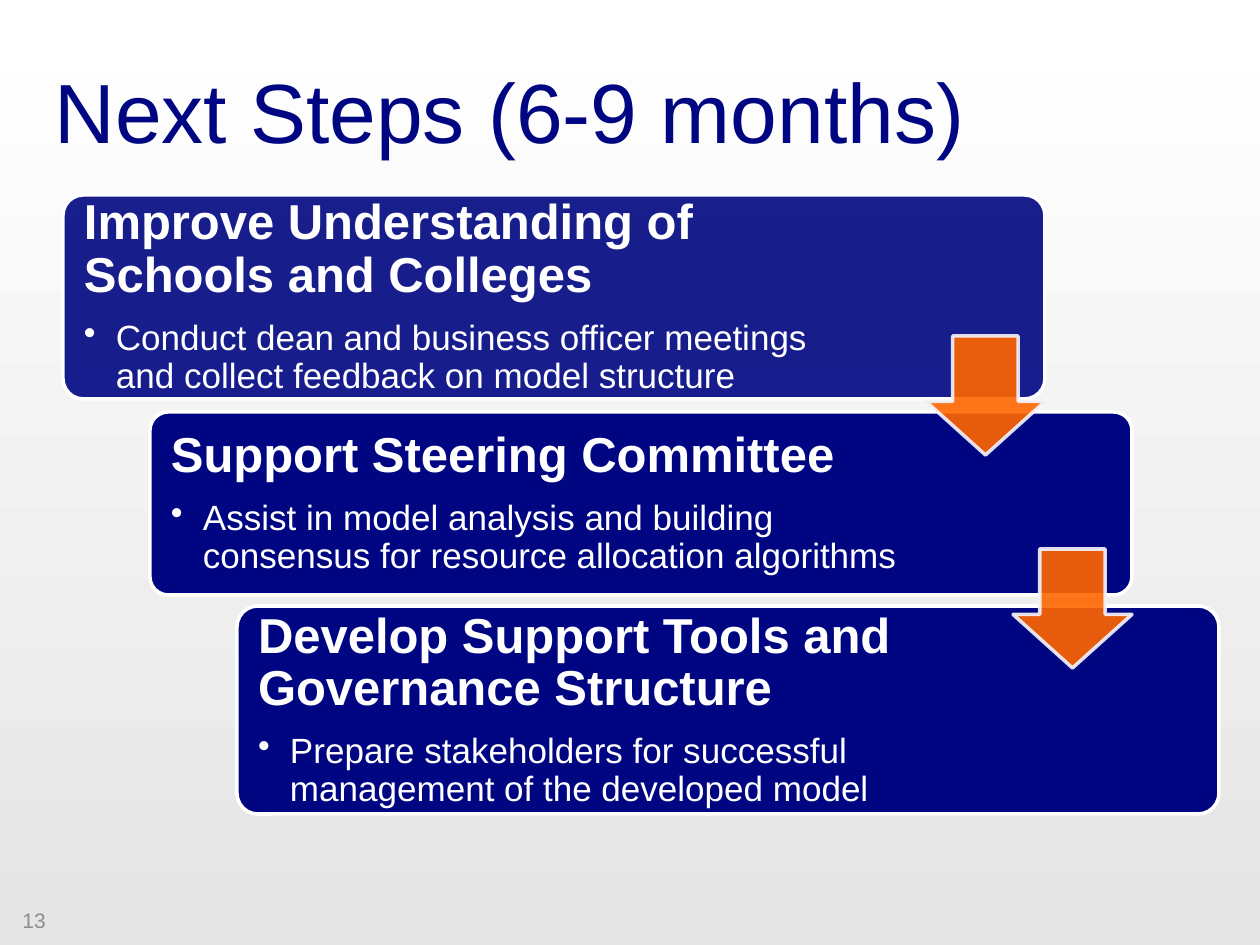
from pptx import Presentation
from pptx.dml.color import RGBColor
from pptx.enum.shapes import MSO_SHAPE as Preset
from pptx.enum.text import MSO_ANCHOR as Anchor
from pptx.oxml.ns import qn
from pptx.util import Emu, Pt
from lxml import etree

COLORS = {
    "navy": "000681", "white": "FFFFFF", "orange": "FF6600",
    "arrow_edge": "F4F4FF", "number": "8C8C8C", "base": "E5E5E5",
}
FONT = "Arial"
PX_PER_INCH = 126


def px(length):
    return Emu(round(length * 914400 / PX_PER_INCH))


def color(name):
    return RGBColor.from_string(COLORS[name])


def set_opacity(fill_format, percent):
    """Add an alpha value to a solid fill that already has its colour."""
    parent = fill_format._xPr
    rgb = parent.find(qn("a:solidFill")).find(qn("a:srgbClr"))
    etree.SubElement(rgb, qn("a:alpha"), val=str(percent * 1000))


class SlideBuilder:
    def __init__(self, deck):
        self.slide = deck.slides.add_slide(deck.slide_layouts[6])

    def background(self, top, bottom):
        fill = self.slide.background.fill
        fill.gradient()
        fill.gradient_angle = 270
        for stop, name in zip(fill.gradient_stops, (top, bottom)):
            stop.color.rgb = color(name)

    def shape(self, preset, bounds, adjustments, fill, line, opacity=100, line_opacity=100):
        shape = self.slide.shapes.add_shape(preset, *map(px, bounds))
        shape.shadow.inherit = False
        for index, value in enumerate(adjustments):
            shape.adjustments[index] = value
        shape.fill.solid()
        shape.fill.fore_color.rgb = color(fill)
        shape.line.color.rgb = color(line)
        shape.line.width = Pt(2)
        if opacity < 100:
            set_opacity(shape.fill, opacity)
        if line_opacity < 100:
            set_opacity(shape.line.fill, line_opacity)

    def text_frame(self, bounds):
        frame = self.slide.shapes.add_textbox(*map(px, bounds)).text_frame
        frame.word_wrap = True
        frame.vertical_anchor = Anchor.MIDDLE
        return frame

    def style(self, para, size, name, bold=False):
        for span in para.runs:
            span.font.name = FONT
            span.font.size = Pt(size)
            span.font.bold = bold
            span.font.color.rgb = color(name)

    def label(self, text, bounds, size, name):
        frame = self.text_frame(bounds)
        frame.text = text
        self.style(frame.paragraphs[0], size, name)

    def bullet(self, para, indent):
        properties = para._p.get_or_add_pPr()
        properties.set("marL", str(indent))
        properties.set("indent", str(-indent))
        etree.SubElement(properties, qn("a:buChar"), char="•")

    def step(self, heading, detail, bounds, text_width, opacity):
        """Draw a rounded panel with a bold heading and one bullet."""
        self.shape(Preset.ROUNDED_RECTANGLE, bounds, [0.1], "navy", "white", opacity)
        left, top, _, height = bounds
        frame = self.text_frame((left + 6, top + 6, text_width, height - 12))
        frame.margin_left = frame.margin_right = px(15)
        frame.margin_top = frame.margin_bottom = px(15)

        title = frame.paragraphs[0]
        title.text = heading
        title.line_spacing = 0.9
        title.space_after = Pt(9.8)
        self.style(title, 28, "white", bold=True)

        item = frame.add_paragraph()
        item.text = detail
        item.level = 1
        self.bullet(item, px(32))
        item.line_spacing = 0.9
        item.space_after = Pt(3)
        self.style(item, 20, "white")

    def down_arrow(self, left, top, side):
        self.shape(Preset.DOWN_ARROW, (left, top, side, side), [0.55, 0.45],
                   "orange", "arrow_edge", 90, 90)


# heading, detail, top, height, text width, opacity
STEPS = [
    ("Improve Understanding of Schools and Colleges",
     "Conduct dean and business officer meetings and collect feedback on model structure",
     195, 204, 784, 90),
    ("Support Steering Committee",
     "Assist in model analysis and building consensus for resource allocation algorithms",
     412, 183, 766, 100),
    ("Develop Support Tools and Governance Structure",
     "Prepare stakeholders for successful management of the developed model",
     606, 208, 765, 100),
]
STEP_LEFT, STEP_WIDTH, STAGGER = 63, 982, 87
ARROW_SIDE = 119
ARROW_TOPS = [336, 549]


def main():
    deck = Presentation()
    deck.slide_width, deck.slide_height = px(1260), px(945)
    page = SlideBuilder(deck)
    page.background("white", "base")
    page.label("Next Steps (6-9 months)", (42, 10, 1092, 199), 48, "navy")

    for index, (heading, detail, top, height, text_width, opacity) in enumerate(STEPS):
        bounds = (STEP_LEFT + index * STAGGER, top, STEP_WIDTH, height)
        page.step(heading, detail, bounds, text_width, opacity)

    for index, top in enumerate(ARROW_TOPS):
        right = STEP_LEFT + index * STAGGER + STEP_WIDTH
        page.down_arrow(right - ARROW_SIDE, top, ARROW_SIDE)

    page.label("13", (10, 895, 294, 50), 12, "number")
    deck.save("out.pptx")


if __name__ == "__main__":
    main()
